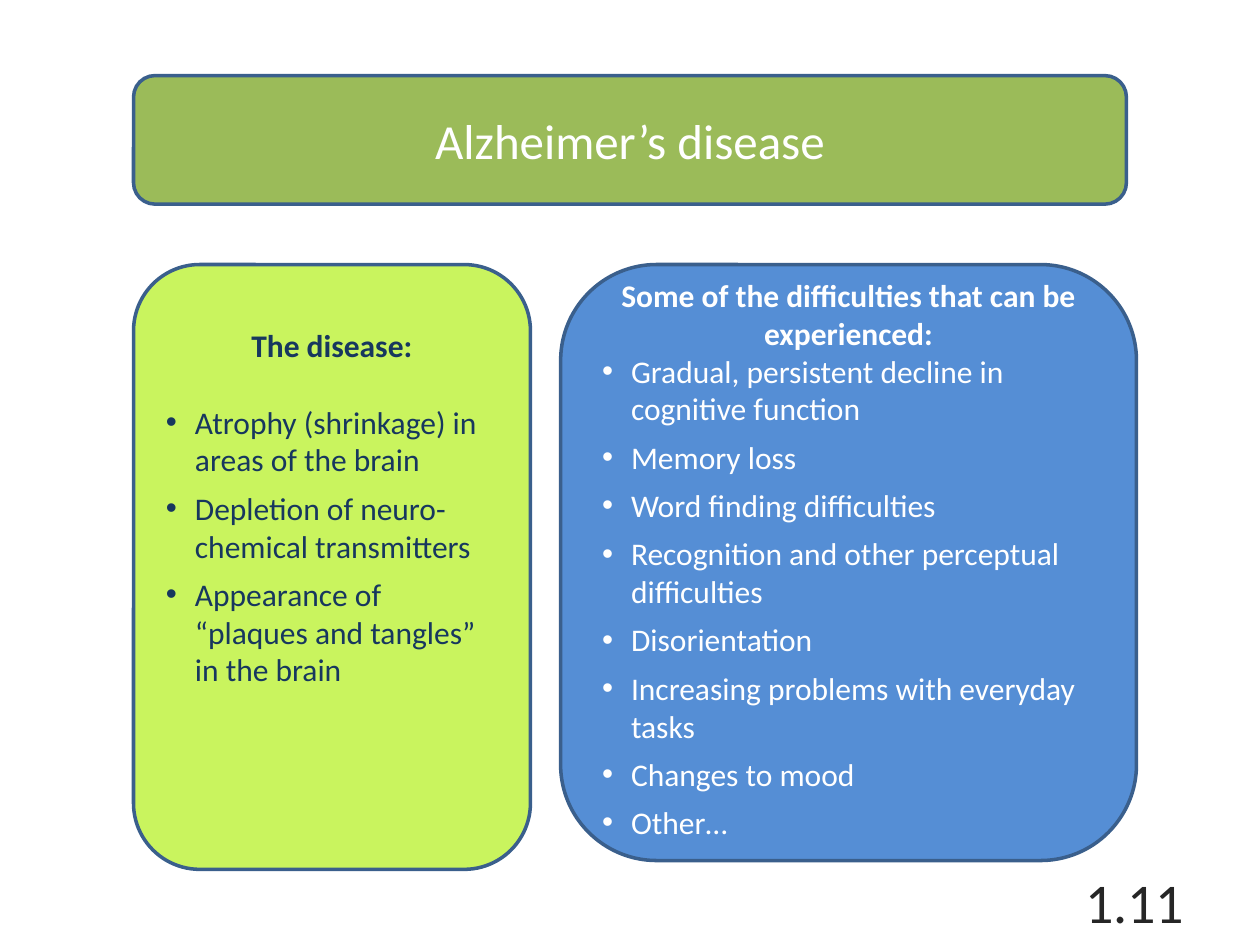
from lxml import etree
from pptx import Presentation
from pptx import util as u
from pptx.dml.color import RGBColor
from pptx.enum import shapes, text
from pptx.oxml.ns import qn

FONT = "Calibri"
COLORS = {
    "white": "FFFFFF",
    "outline": "3A5F8C",
    "green": "9BBB59",
    "lime": "C9F45E",
    "blue": "558ED5",
    "navy": "17375E",
    "dark": "262626",
}

# Left, top, width, height in inches
TITLE_BOX = (1.06, 0.6, 7.88, 1.02)
DISEASE_BOX = (1.06, 2.1, 3.15, 4.8)
DIFFICULTIES_BOX = (4.45, 2.1, 4.57, 4.73)
NUMBER_BOX = (7.17, 6.95, 2.33, 0.4)

DISEASE = [
    "Atrophy (shrinkage) in areas of the brain",
    "Depletion of neuro-chemical transmitters",
    "Appearance of “plaques and tangles” in the brain",
]
DIFFICULTIES = [
    "Gradual, persistent decline in cognitive function",
    "Memory loss",
    "Word finding difficulties",
    "Recognition and other perceptual difficulties",
    "Disorientation",
    "Increasing problems with everyday tasks",
    "Changes to mood",
    "Other…",
]


def color(name):
    return RGBColor.from_string(COLORS[name])


def place(sp, box):
    sp.left, sp.top, sp.width, sp.height = (u.Inches(v) for v in box)


def add_panel(s, box, fill):
    """Rounded panel that lies behind the placeholders."""
    sp = s.shapes.add_shape(shapes.MSO_SHAPE.ROUNDED_RECTANGLE,
                            *(u.Inches(v) for v in box))
    sp.shadow.inherit = False
    sp.fill.solid()
    sp.fill.fore_color.rgb = color(fill)
    sp.line.color.rgb = color("outline")
    sp.line.width = u.Pt(2)
    s.shapes._spTree.insert(2, sp._element)


def set_frame(sp, anchor, side=0.1, top=0.05):
    tf = sp.text_frame
    tf.word_wrap = True
    tf.auto_size = text.MSO_AUTO_SIZE.NONE
    tf.vertical_anchor = anchor
    tf.margin_left = tf.margin_right = u.Inches(side)
    tf.margin_top = u.Inches(top)
    tf.margin_bottom = u.Inches(0.05)
    return tf


def write(p, words, size=18, fill="white", bold=False,
          align=text.PP_ALIGN.LEFT, after=0, bullet=False):
    p.alignment = align
    p.space_before = u.Pt(0)
    p.space_after = u.Pt(after)
    # Hanging indent and bullet
    pPr = p._p.get_or_add_pPr()
    indent = u.Inches(0.23) if bullet else 0
    pPr.set("marL", str(indent))
    pPr.set("indent", str(-indent))
    if bullet:
        etree.SubElement(pPr, qn("a:buFont")).set("typeface", "Arial")
        etree.SubElement(pPr, qn("a:buChar")).set("char", "•")
    else:
        etree.SubElement(pPr, qn("a:buNone"))
    r = p.add_run()
    r.text = words
    r.font.name = FONT
    r.font.size = u.Pt(size)
    r.font.bold = bold
    r.font.color.rgb = color(fill)


def fill_list(sp, box, heading, items, fill, top, gap=0):
    """Centred heading followed by a bulleted list, inside the round corners."""
    place(sp, box)
    side = 0.1 + 0.05 * min(box[2:])
    tf = set_frame(sp, text.MSO_ANCHOR.TOP, side=side, top=top)
    write(tf.paragraphs[0], heading, fill=fill, bold=True,
          align=text.PP_ALIGN.CENTER, after=gap)
    for item in items:
        write(tf.add_paragraph(), item, fill=fill, after=6, bullet=True)


def main():
    prs = Presentation()
    prs.slide_width, prs.slide_height = u.Inches(10), u.Inches(7.5)
    s = prs.slides.add_slide(prs.slide_layouts.get_by_name("Two Content"))
    title, disease, difficulties = s.placeholders

    # Coloured panels
    for box, fill in ((TITLE_BOX, "green"), (DISEASE_BOX, "lime"),
                      (DIFFICULTIES_BOX, "blue")):
        add_panel(s, box, fill)

    # Title
    place(title, TITLE_BOX)
    tf = set_frame(title, text.MSO_ANCHOR.MIDDLE)
    write(tf.paragraphs[0], "Alzheimer’s disease", size=28,
          align=text.PP_ALIGN.CENTER)

    # Lists
    fill_list(disease, DISEASE_BOX, "The disease:", DISEASE, "navy",
              top=0.49, gap=22)
    fill_list(difficulties, DIFFICULTIES_BOX,
              "Some of the difficulties that can be experienced:",
              DIFFICULTIES, "white", top=0.09)

    # Page number
    number = s.shapes.add_textbox(*(u.Inches(v) for v in NUMBER_BOX))
    tf = set_frame(number, text.MSO_ANCHOR.MIDDLE)
    write(tf.paragraphs[0], "1.11", size=32, fill="dark",
          align=text.PP_ALIGN.RIGHT)

    prs.save("out.pptx")


if __name__ == "__main__":
    main()
